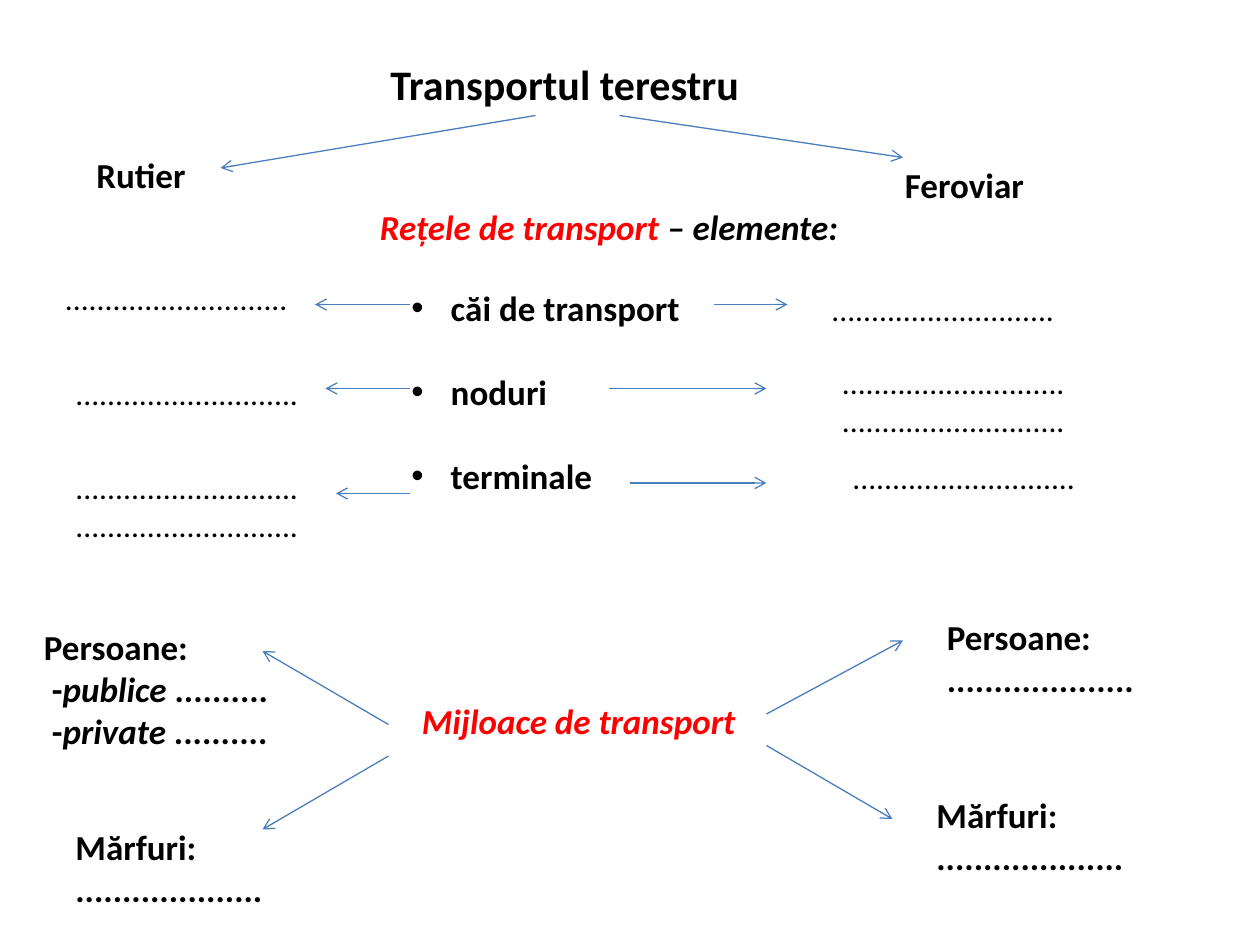
from dataclasses import dataclass
from typing import NamedTuple

from lxml import etree
from pptx import Presentation
from pptx import util as u
from pptx.dml.color import RGBColor
from pptx.enum import shapes, text
from pptx.oxml import ns

PX = 7620


@dataclass(frozen=True)
class Theme:
    font: str = "Calibri"
    ink: str = "000000"
    accent: str = "FF0000"
    arrow: str = "4B7EBC"
    title: int = 24
    body: int = 20
    dots: int = 18
    line: float = 0.75
    gap: int = 24


THEME = Theme()


class Run(NamedTuple):
    text: str
    italic: bool = False
    color: str = THEME.ink


class Para(NamedTuple):
    runs: tuple[Run, ...]
    bullet: bool = False
    before: int = 0


class Label(NamedTuple):
    left: int
    top: int
    width: int
    height: int
    paras: tuple[Para, ...]
    size: int = THEME.body
    bold: bool = True


class Arrow(NamedTuple):
    x1: int
    y1: int
    x2: int
    y2: int


def px(n: int) -> u.Emu:
    return u.Emu(n * PX)


def plain(*lines: str) -> tuple[Para, ...]:
    return tuple(Para((Run(line),)) for line in lines)


def blank(left: int, top: int, rows: int = 1) -> Label:
    height = 11 + 37 * rows
    return Label(left, top, 280, height, plain(*["." * 28] * rows), THEME.dots, False)


def answer(left: int, top: int, name: str) -> Label:
    return Label(left, top, 220, 92, plain(name, "." * 20))


def item(name: str, before: int = THEME.gap) -> Para:
    return Para((Run(f" {name}"),), True, before)


def kind(name: str) -> Para:
    return Para((Run(" -"), Run(name, True), Run(" " + "." * 10)))


LABELS = [
    Label(360, 50, 370, 60, plain("Transportul terestru"), THEME.title),
    Label(80, 140, 280, 53, plain("Rutier")),
    Label(850, 150, 300, 53, plain("Feroviar")),
    Label(350, 190, 470, 290, (
        Para((Run("Rețele de transport ", True, THEME.accent),
              Run("– elemente:", True))),
        item("căi de transport", 22),
        item("noduri"),
        item("terminale"),
    )),
    blank(50, 260),
    blank(780, 270),
    blank(60, 350),
    blank(800, 430),
    blank(60, 440, 2),
    blank(790, 340, 2),
    Label(390, 660, 410, 53,
          (Para((Run("Mijloace de transport", True, THEME.accent),)),)),
    Label(30, 590, 260, 133,
          (*plain("Persoane:"), kind("publice"), kind("private"))),
    answer(60, 780, "Mărfuri:"),
    answer(890, 580, "Persoane:"),
    answer(880, 750, "Mărfuri:"),
]

ARROWS = [
    Arrow(510, 110, 210, 160),
    Arrow(590, 110, 860, 150),
    Arrow(680, 290, 750, 290),
    Arrow(390, 290, 300, 290),
    Arrow(580, 370, 730, 370),
    Arrow(390, 370, 310, 370),
    Arrow(600, 460, 730, 460),
    Arrow(390, 470, 320, 470),
    Arrow(370, 690, 250, 620),
    Arrow(370, 720, 250, 790),
    Arrow(730, 680, 860, 610),
    Arrow(730, 710, 850, 780),
]


def add_run(p, content: str, *, size: int, bold: bool, italic: bool, color: str) -> None:
    r = p.add_run()
    r.text = content
    r.font.name = THEME.font
    r.font.size = u.Pt(size)
    r.font.bold = bold
    r.font.italic = italic
    r.font.color.rgb = RGBColor.from_string(color)


def add_bullet(p) -> None:
    pr = p._p.get_or_add_pPr()
    pr.set("marL", str(px(60)))
    pr.set("indent", str(px(-30)))
    etree.SubElement(pr, ns.qn("a:buFont")).set("typeface", "Arial")
    etree.SubElement(pr, ns.qn("a:buChar")).set("char", "•")


def draw_label(s, label: Label) -> None:
    box = s.shapes.add_textbox(px(label.left), px(label.top),
                               px(label.width), px(label.height))
    tf = box.text_frame
    tf.word_wrap = True
    tf.auto_size = text.MSO_AUTO_SIZE.SHAPE_TO_FIT_TEXT
    for i, para in enumerate(label.paras):
        p = tf.add_paragraph() if i else tf.paragraphs[0]
        p.space_before = u.Pt(para.before)
        if para.bullet:
            add_bullet(p)
        for run in para.runs:
            add_run(p, run.text, size=label.size, bold=label.bold,
                    italic=run.italic, color=run.color)


def draw_arrow(s, arrow: Arrow) -> None:
    c = s.shapes.add_connector(shapes.MSO_CONNECTOR.STRAIGHT, *map(px, arrow))
    c.line.color.rgb = RGBColor.from_string(THEME.arrow)
    c.line.width = u.Pt(THEME.line)
    etree.SubElement(c.line._get_or_add_ln(), ns.qn("a:tailEnd")).set("type", "arrow")
    etree.SubElement(c._element.spPr, ns.qn("a:effectLst"))


def main() -> None:
    prs = Presentation()
    prs.slide_width, prs.slide_height = px(1200), px(900)
    s = prs.slides.add_slide(prs.slide_layouts[6])
    for label in LABELS:
        draw_label(s, label)
    for arrow in ARROWS:
        draw_arrow(s, arrow)
    prs.save("out.pptx")


if __name__ == "__main__":
    main()
